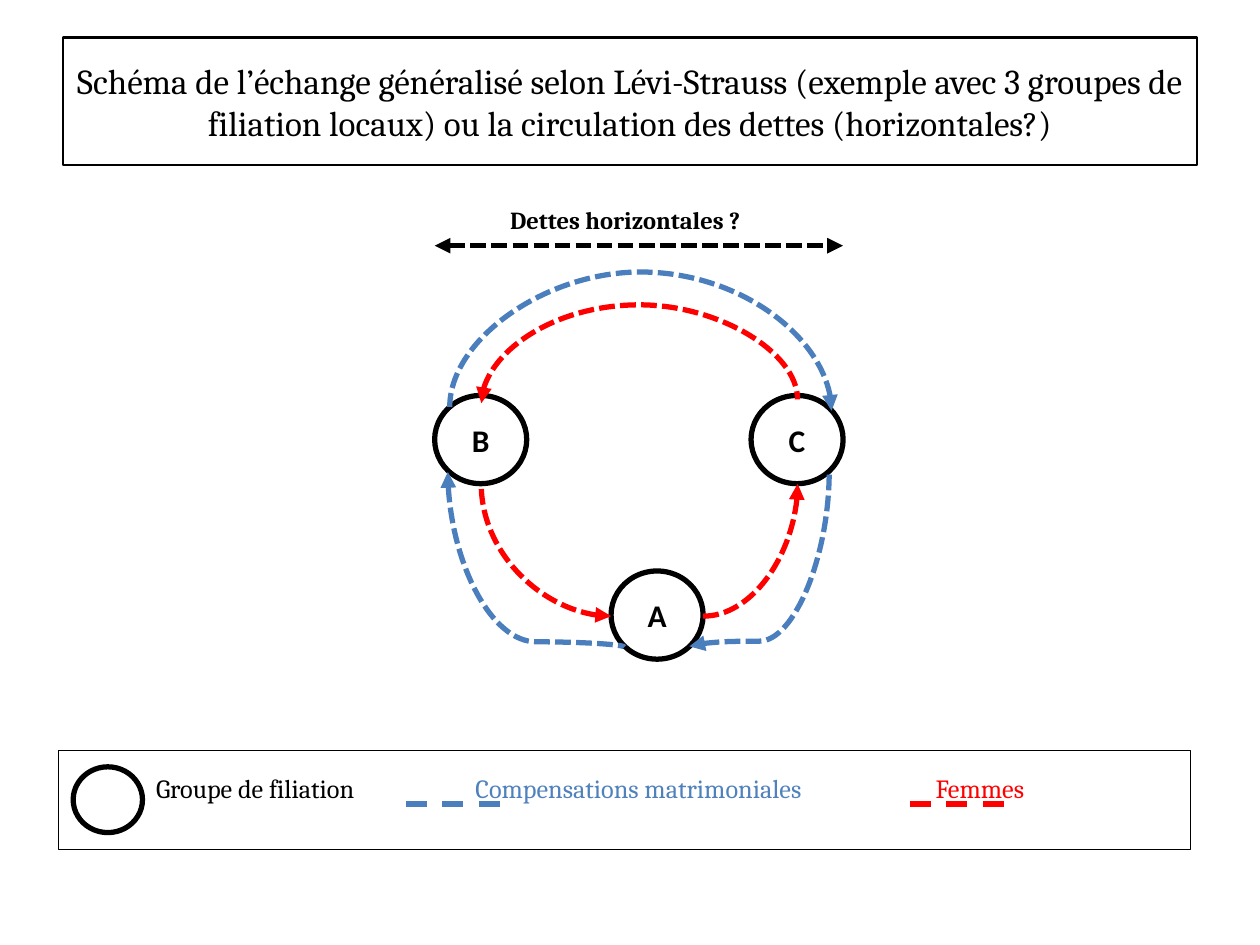
from lxml import etree
from pptx import Presentation
from pptx import util as u
from pptx.dml import color
from pptx.enum import dml, shapes, text
from pptx.oxml import ns

Pt = u.Pt
COLORS = {"black": "000000", "blue": "4B7EBC", "legend": "4F81BD", "red": "FF0000"}
DASH = dml.MSO_LINE


def style_line(line, tone, width, dash=None, ends=()):
    line.color.rgb = color.RGBColor.from_string(COLORS[tone])
    line.width = Pt(width)
    if dash is not None:
        line.dash_style = dash
    for end in ends:
        etree.SubElement(line._ln, ns.qn(f"a:{end}"), type="triangle")
    if not hasattr(line._parent, "shadow"):
        return
    line._parent.shadow.inherit = False


def style_text(span, size, font, tone="black", bold=False):
    span.font.size = Pt(size)
    span.font.name = font
    span.font.bold = bold
    span.font.color.rgb = color.RGBColor.from_string(COLORS[tone])


deck = Presentation()
deck.slide_width, deck.slide_height = Pt(720), Pt(540)
page = deck.slides.add_slide(deck.slide_layouts[5])

title = page.shapes.title
title.left, title.top, title.width, title.height = Pt(36), Pt(21.6), Pt(648), Pt(72.7)
title.text_frame.text = (
    "Schéma de l’échange généralisé selon Lévi-Strauss (exemple avec 3 groupes de "
    "filiation locaux) ou la circulation des dettes (horizontales?)"
)
title.text_frame.vertical_anchor = text.MSO_ANCHOR.MIDDLE
title.text_frame.paragraphs[0].alignment = text.PP_ALIGN.CENTER
style_text(title.text_frame.paragraphs[0].runs[0], 20, "Cambria")
style_line(title.line, "black", 1.5)

legend = page.shapes.add_shape(
    shapes.MSO_SHAPE.RECTANGLE, Pt(33.6), Pt(428.7), Pt(646.6), Pt(56.7)
)
legend.shadow.inherit = False
legend.fill.background()
style_line(legend.line, "black", 0.75)
legend.text_frame.vertical_anchor = text.MSO_ANCHOR.MIDDLE
legend.text_frame.margin_bottom = Pt(17.5)
para = legend.text_frame.paragraphs[0]
para.alignment = text.PP_ALIGN.LEFT
tabs = etree.SubElement(para._p.get_or_add_pPr(), ns.qn("a:tabLst"))
for label, tone, stop in [
    ("Groupe de filiation", "black", 48.5),
    ("Compensations matrimoniales", "legend", 231),
    ("Femmes", "red", 494),
]:
    etree.SubElement(tabs, ns.qn("a:tab"), pos=str(Pt(stop)), algn="l")
    span = para.add_run()
    span.text = "\t" + label
    style_text(span, 15, "Cambria", tone)

for name, left, top, width, height in [
    ("A", 349.2, 326.3, 52.6, 50.4),
    ("B", 248.4, 226, 52.6, 50.4),
    ("C", 429.2, 226, 52.6, 50.4),
    ("", 41.8, 438.2, 39.6, 37.6),
]:
    circle = page.shapes.add_shape(
        shapes.MSO_SHAPE.FLOWCHART_CONNECTOR, Pt(left), Pt(top), Pt(width), Pt(height)
    )
    circle.shadow.inherit = False
    circle.fill.background()
    style_line(circle.line, "black", 3)
    if name:
        circle.text_frame.text = name
        circle.text_frame.vertical_anchor = text.MSO_ANCHOR.MIDDLE
        circle.text_frame.paragraphs[0].alignment = text.PP_ALIGN.CENTER
        style_text(circle.text_frame.paragraphs[0].runs[0], 18, "Calibri", bold=True)

for tone, left, top, width, height, turn, flips, bend in [
    ("red", 391, 287.3, 75.6, 54, 90, "", None),
    ("red", 275, 276.5, 74.2, 75.6, 180, "", None),
    ("red", 364.3, 139, 2.16, 180.7, 90, "HV", 26.08),
    ("blue", 365, 124.6, 2.16, 218.2, 270, "V", 36.81),
    ("blue", 256.3, 269.3, 100.1, 100.8, 270, "H", 0.97),
    ("blue", 383.8, 279.4, 100.1, 79.9, 90, "HV", 0.03),
]:
    curve = page.shapes.add_connector(
        shapes.MSO_CONNECTOR.CURVE, Pt(left), Pt(top), Pt(left + width), Pt(top + height)
    )
    frame = curve._element.spPr.find(ns.qn("a:xfrm"))
    frame.set("rot", str(turn * 60000))
    for flip in flips:
        frame.set(f"flip{flip}", "1")
    geometry = curve._element.spPr.find(ns.qn("a:prstGeom"))
    if bend is None:
        geometry.set("prst", "curvedConnector2")
    else:
        guides = geometry.find(ns.qn("a:avLst"))
        etree.SubElement(guides, ns.qn("a:gd"), name="adj1", fmla=f"val {round(bend * 100000)}")
    style_line(curve.line, tone, 3, DASH.SQUARE_DOT, ["headEnd"])
    etree.SubElement(curve._element.spPr, ns.qn("a:effectLst"))

for tone, start, end, height, dash, ends in [
    ("blue", 231.8, 288.7, 459.4, DASH.DASH, []),
    ("red", 519.8, 576, 459.4, DASH.DASH, []),
    ("black", 248.4, 481.7, 140.4, DASH.SQUARE_DOT, ["headEnd", "tailEnd"]),
]:
    line = page.shapes.add_connector(
        shapes.MSO_CONNECTOR.STRAIGHT, Pt(start), Pt(height), Pt(end), Pt(height)
    )
    style_line(line.line, tone, 3, dash, ends)
    etree.SubElement(line._element.spPr, ns.qn("a:effectLst"))

caption = page.shapes.add_textbox(Pt(284.4), Pt(113.8), Pt(181.4), Pt(24.5))
caption.text_frame.word_wrap = True
caption.text_frame.text = "Dettes horizontales ?"
style_text(caption.text_frame.paragraphs[0].runs[0], 14, "Cambria", bold=True)

deck.save("out.pptx")
